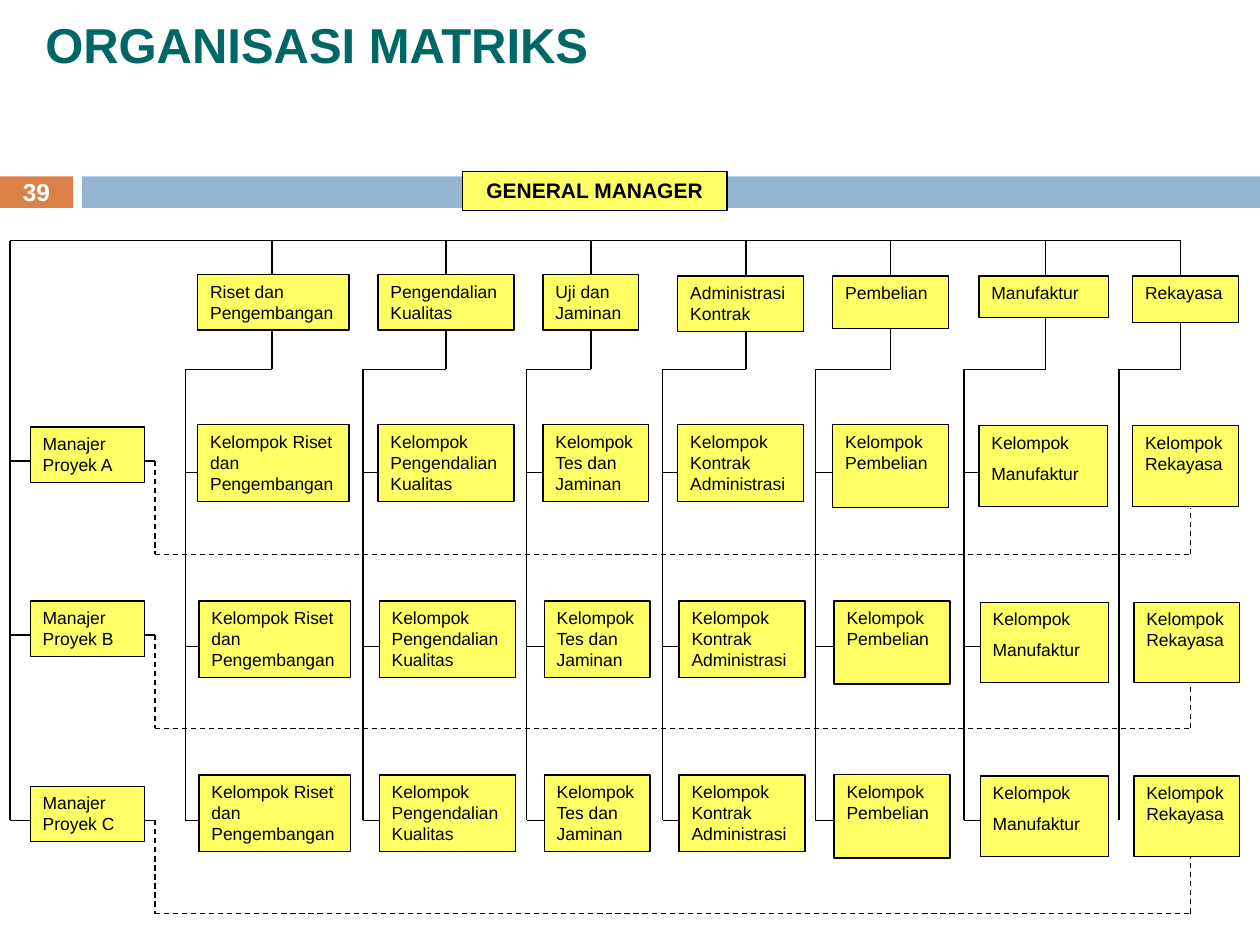
from typing import NamedTuple

from pptx import Presentation
from pptx.dml.color import RGBColor
from pptx.enum.dml import MSO_LINE
from pptx.enum.shapes import MSO_CONNECTOR as Connector, MSO_SHAPE as Shape
from pptx.enum.text import MSO_ANCHOR as Anchor, PP_ALIGN as Align
from pptx.oxml.ns import qn
from pptx.util import Inches, Pt
from lxml.etree import SubElement

FONT = "Arial"
BLACK = RGBColor(0x00, 0x00, 0x00)
WHITE = RGBColor(0xFF, 0xFF, 0xFF)
YELLOW = RGBColor(0xFF, 0xFF, 0x66)
TEAL = RGBColor(0x00, 0x66, 0x66)
ORANGE = RGBColor(0xDD, 0x80, 0x47)
BLUE = RGBColor(0x94, 0xB6, 0xD2)

BUS_X, BUS_Y, BRANCH_Y = 0.08, 1.91, 2.93
TRUNK_BOTTOM = 6.51
STUB = 0.35
LOOP_LEFT, LOOP_RIGHT = 1.23, 9.45


class Box(NamedTuple):
    left: float
    top: float
    width: float
    height: float


class Department(NamedTuple):
    trunk_x: float
    drop_x: float
    head: Box
    name: str
    group_width: float
    group_height: float
    group_shift: float
    group: tuple[str, ...]
    has_stubs: bool = True


class Project(NamedTuple):
    name: str
    manager_top: float
    manager_y: float
    group_top: float
    group_dx: float
    stub_y: float
    loop_top: float
    loop_y: float


DEPARTMENTS = [
    Department(1.47, 2.16, Box(1.57, 2.18, 1.2, 0.44), "Riset dan Pengembangan",
               1.2, 0.61, 0, ("Kelompok Riset dan Pengembangan",)),
    Department(2.88, 3.54, Box(3, 2.18, 1.08, 0.44), "Pengendalian Kualitas",
               1.08, 0.61, 0, ("Kelompok Pengendalian Kualitas",)),
    Department(4.18, 4.69, Box(4.31, 2.18, 0.76, 0.44), "Uji dan Jaminan",
               0.84, 0.61, 0, ("Kelompok Tes dan Jaminan",)),
    Department(5.26, 5.92, Box(5.38, 2.19, 1, 0.44), "Administrasi Kontrak",
               1, 0.61, 0, ("Kelompok Kontrak Administrasi",)),
    Department(6.47, 7.07, Box(6.61, 2.19, 0.92, 0.42), "Pembelian",
               0.92, 0.66, 0, ("Kelompok Pembelian",)),
    Department(7.65, 8.3, Box(7.77, 2.19, 1.03, 0.33), "Manufaktur",
               1.02, 0.64, 0.01, ("Kelompok", "Manufaktur")),
    Department(8.88, 9.37, Box(8.99, 2.19, 0.84, 0.37), "Rekayasa",
               0.84, 0.64, 0.01, ("Kelompok Rekayasa",), False),
]

PROJECTS = [
    Project("Manajer Proyek A", 3.39, 3.66, 3.37, 0, 3.75, 4.03, 4.4),
    Project("Manajer Proyek B", 4.77, 5.04, 4.77, 0.01, 5.13, 5.41, 5.78),
    Project("Manajer Proyek C", 6.24, 6.51, 6.15, 0.01, 6.51, 6.79, 7.25),
]


def add_text(sp, paragraphs: tuple[str, ...], size: float, color: RGBColor,
             bold: bool = False, align=Align.LEFT, anchor=Anchor.TOP) -> None:
    tf = sp.text_frame
    tf.word_wrap = True
    tf.vertical_anchor = anchor
    for i, text in enumerate(paragraphs):
        p = tf.add_paragraph() if i else tf.paragraphs[0]
        p.alignment = align
        p.space_before = Pt(size * 0.55 if i else 0)
        r = p.add_run()
        r.text = text
        r.font.name = FONT
        r.font.size = Pt(size)
        r.font.bold = bold
        r.font.color.rgb = color


def add_rect(s, box: Box, fill: RGBColor, outlined: bool = False):
    sp = s.shapes.add_shape(Shape.RECTANGLE, *map(Inches, box))
    sp.shadow.inherit = False
    sp.fill.solid()
    sp.fill.fore_color.rgb = fill
    if outlined:
        sp.line.color.rgb = BLACK
        sp.line.width = Pt(0.75)
    else:
        sp.line.fill.background()
    return sp


def add_unit(s, box: Box, *paragraphs: str) -> None:
    add_text(add_rect(s, box, YELLOW, True), paragraphs, 10, BLACK)


def add_line(s, x1: float, y1: float, x2: float, y2: float, dashed: bool = False) -> None:
    cx = s.shapes.add_connector(Connector.STRAIGHT, *map(Inches, (x1, y1, x2, y2)))
    cx.line.color.rgb = BLACK
    cx.line.width = Pt(0.75)
    if dashed:
        cx.line.dash_style = MSO_LINE.DASH
    SubElement(cx._element.spPr, qn("a:effectLst"))


def add_title(s, text: str) -> None:
    sp = s.shapes.title
    sp.left, sp.top, sp.width, sp.height = map(Inches, (0.26, 0.17, 8.73, 0.45))
    add_text(sp, (text,), 28, TEAL, bold=True)
    sp.text_frame.paragraphs[0].line_spacing = 0.75


def add_band(s) -> None:
    number = add_rect(s, Box(0, 1.4, 0.58, 0.25), ORANGE)
    add_text(number, ("39",), 14, WHITE, True, Align.CENTER, Anchor.MIDDLE)
    add_rect(s, Box(0.65, 1.4, 9.35, 0.25), BLUE)


def add_solid_lines(s) -> None:
    add_line(s, BUS_X, BUS_Y, DEPARTMENTS[-1].drop_x, BUS_Y)
    add_line(s, BUS_X, BUS_Y, BUS_X, TRUNK_BOTTOM)
    for project in PROJECTS:
        add_line(s, BUS_X, project.manager_y, LOOP_LEFT, project.manager_y)
    for dept in DEPARTMENTS:
        add_line(s, dept.drop_x, BUS_Y, dept.drop_x, BRANCH_Y)
        add_line(s, dept.trunk_x, BRANCH_Y, dept.drop_x, BRANCH_Y)
        add_line(s, dept.trunk_x, BRANCH_Y, dept.trunk_x, TRUNK_BOTTOM)
        if dept.has_stubs:
            for project in PROJECTS:
                add_line(s, dept.trunk_x, project.stub_y, dept.trunk_x + STUB, project.stub_y)


def add_units(s) -> None:
    manager = add_rect(s, Box(3.67, 1.36, 2.1, 0.31), YELLOW, True)
    add_text(manager, ("GENERAL MANAGER",), 12, BLACK, True, Align.CENTER)
    for dept in DEPARTMENTS:
        add_unit(s, dept.head, dept.name)
    for project in PROJECTS:
        add_unit(s, Box(0.24, project.manager_top, 0.91, 0.44), project.name)
        for dept in DEPARTMENTS:
            box = Box(dept.head.left + project.group_dx, project.group_top + dept.group_shift,
                      dept.group_width, dept.group_height)
            add_unit(s, box, *dept.group)


def add_dashed_loops(s) -> None:
    for project in PROJECTS:
        add_line(s, LOOP_LEFT, project.manager_y, LOOP_LEFT, project.loop_y, True)
        add_line(s, LOOP_LEFT, project.loop_y, LOOP_RIGHT, project.loop_y, True)
        add_line(s, LOOP_RIGHT, project.loop_y, LOOP_RIGHT, project.loop_top, True)


def main() -> None:
    prs = Presentation()
    prs.slide_width, prs.slide_height = Inches(10), Inches(7.5)
    s = prs.slides.add_slide(prs.slide_layouts[5])
    add_title(s, "ORGANISASI MATRIKS")
    add_band(s)
    add_solid_lines(s)
    add_units(s)
    add_dashed_loops(s)
    prs.save("out.pptx")


if __name__ == "__main__":
    main()
